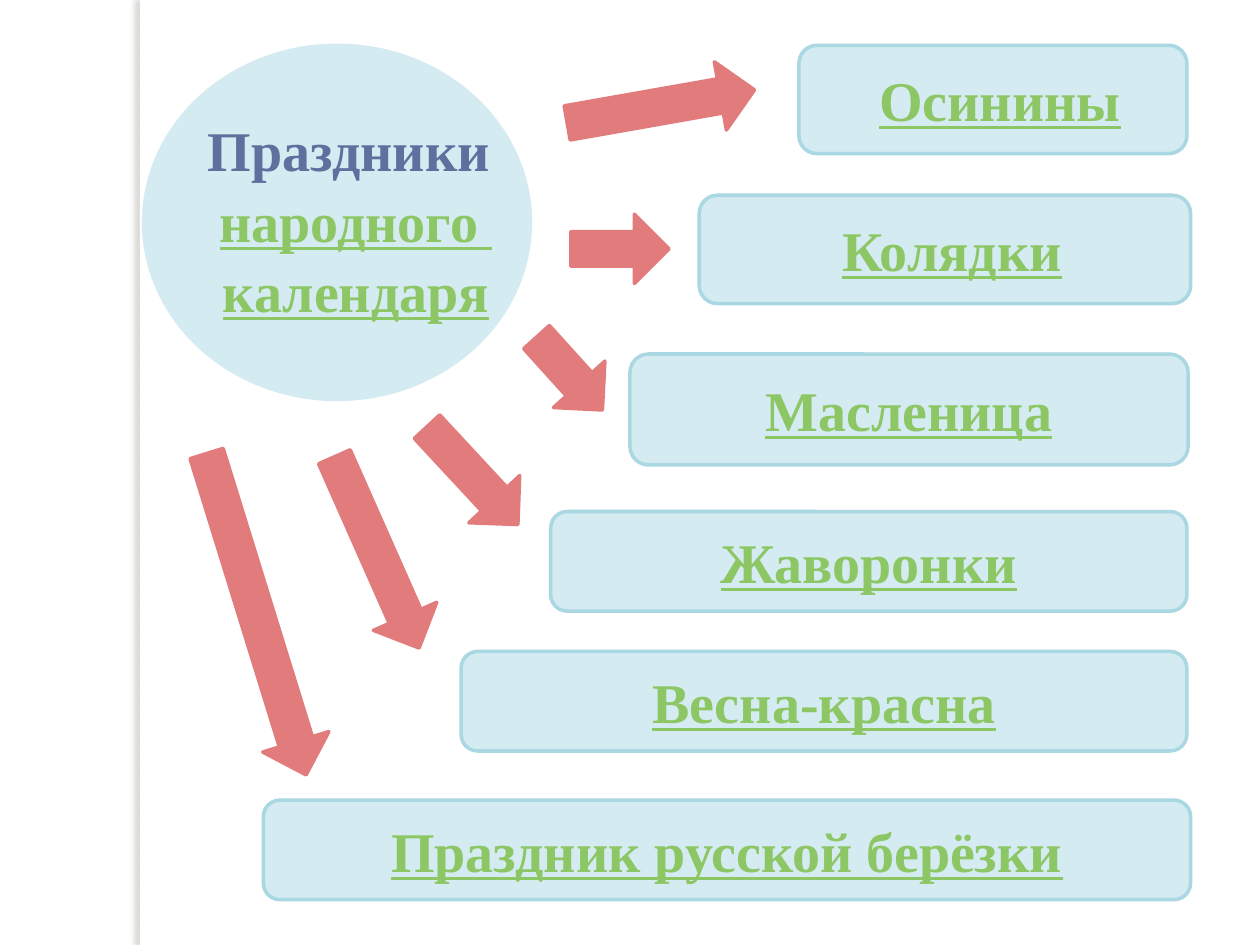
from lxml import etree
from pptx import Presentation
from pptx.dml.color import RGBColor
from pptx.enum import shapes, text
from pptx.oxml.ns import qn
from pptx.util import Inches, Pt

WHITE = RGBColor(0xFF, 0xFF, 0xFF)
PALE_BLUE = RGBColor(0xD4, 0xEB, 0xF1)
EDGE_BLUE = RGBColor(0xA9, 0xD7, 0xE2)
CORAL = RGBColor(0xE1, 0x7B, 0x7C)
GREEN = RGBColor(0x8D, 0xC7, 0x65)
INDIGO = RGBColor(0x60, 0x6F, 0x9E)
SHADOW = RGBColor(0x73, 0x6F, 0x63)
FONT = "Times New Roman"

# Holiday name and box: left, top, width, height
HOLIDAYS = [
    (" ", "Осинины", (6.34, 0.36, 3.08, 0.86)),
    (" ", "Колядки", (5.55, 1.55, 3.9, 0.86)),
    ("", "Масленица", (5, 2.81, 4.43, 0.88)),
    ("", "Жаворонки", (4.37, 4.06, 5.05, 0.79)),
    ("", "Весна-красна", (3.66, 5.17, 5.76, 0.79)),
    ("", "Праздник русской берёзки", (2.09, 6.35, 7.36, 0.79)),
]

# Arrow left, top, length and rotation
ARROW_HEIGHT = 0.55
ARROWS = [
    (4.49, 0.57, 1.51, 350),
    (4.53, 1.7, 0.78, 0),
    (4.13, 2.69, 0.78, 47.9),
    (3.22, 3.5, 1.06, 47.1),
    (2.16, 4.11, 1.66, 66.1),
    (0.7, 4.6, 2.67, 72.8),
]


def add_block(page, kind, box, fill, line=None):
    block = page.shapes.add_shape(kind, *(Inches(value) for value in box))
    block.shadow.inherit = False
    block.fill.solid()
    block.fill.fore_color.rgb = fill
    if line is None:
        block.line.fill.background()
    else:
        block.line.color.rgb = line
        block.line.width = Pt(2)
    return block


def add_span(para, words, color, underline=False, bold=True):
    span = para.add_run()
    span.text = words
    span.font.name = FONT
    span.font.size = Pt(32)
    span.font.bold = bold
    span.font.underline = underline
    span.font.color.rgb = color


def add_side_band(page, box):
    band = add_block(page, shapes.MSO_SHAPE.RECTANGLE, box, WHITE)
    effects = band._element.spPr.find(qn("a:effectLst"))
    shadow = etree.SubElement(effects, qn("a:outerShdw"), blurRad=str(Pt(3)),
                              dist=str(Pt(3)), dir="10800000", algn="tl", rotWithShape="0")
    color = etree.SubElement(shadow, qn("a:srgbClr"), val=str(SHADOW))
    etree.SubElement(color, qn("a:alpha"), val="25000")


def add_topic(page, circle_box, title_box):
    add_block(page, shapes.MSO_SHAPE.FLOWCHART_CONNECTOR, circle_box, PALE_BLUE, PALE_BLUE)
    title = page.shapes.title
    page.shapes._spTree.append(title._element)  # bring the title in front of the circle
    title.left, title.top, title.width, title.height = (Inches(v) for v in title_box)
    frame = title.text_frame
    frame.word_wrap = False
    frame.auto_size = text.MSO_AUTO_SIZE.NONE
    frame.vertical_anchor = text.MSO_ANCHOR.TOP
    lines = [
        [("Праздники ", INDIGO, False, True)],
        [("народного", GREEN, True, True), (" ", GREEN, True, False)],
        [("календаря", GREEN, True, True)],
    ]
    for index, spans in enumerate(lines):
        para = frame.add_paragraph() if index else frame.paragraphs[0]
        para.alignment = text.PP_ALIGN.CENTER
        para.line_spacing = 1.05
        for span in spans:
            add_span(para, *span)


def add_holiday(page, lead, name, box):
    card = add_block(page, shapes.MSO_SHAPE.ROUNDED_RECTANGLE, box, PALE_BLUE, EDGE_BLUE)
    frame = card.text_frame
    frame.word_wrap = True
    frame.vertical_anchor = text.MSO_ANCHOR.MIDDLE
    para = frame.paragraphs[0]
    para.alignment = text.PP_ALIGN.CENTER
    if lead:
        add_span(para, lead, INDIGO)
    add_span(para, name, GREEN, underline=True)


def add_arrow(page, left, top, length, angle):
    box = (left, top, length, ARROW_HEIGHT)
    arrow = add_block(page, shapes.MSO_SHAPE.RIGHT_ARROW, box, CORAL, CORAL)
    arrow.rotation = angle


def main():
    deck = Presentation()
    deck.slide_width, deck.slide_height = Inches(10), Inches(7.5)
    page = deck.slides.add_slide(deck.slide_layouts.get_by_name("Title Only"))

    # Side band and central topic
    add_side_band(page, (1.11, 0, 0.08, 7.5))
    add_topic(page, (1.14, 0.36, 3.07, 2.81), (1.54, 0.84, 2.57, 1.72))

    # Holidays and the arrows that lead to them
    for holiday in HOLIDAYS:
        add_holiday(page, *holiday)
    for arrow in ARROWS:
        add_arrow(page, *arrow)

    deck.save("out.pptx")


if __name__ == "__main__":
    main()
